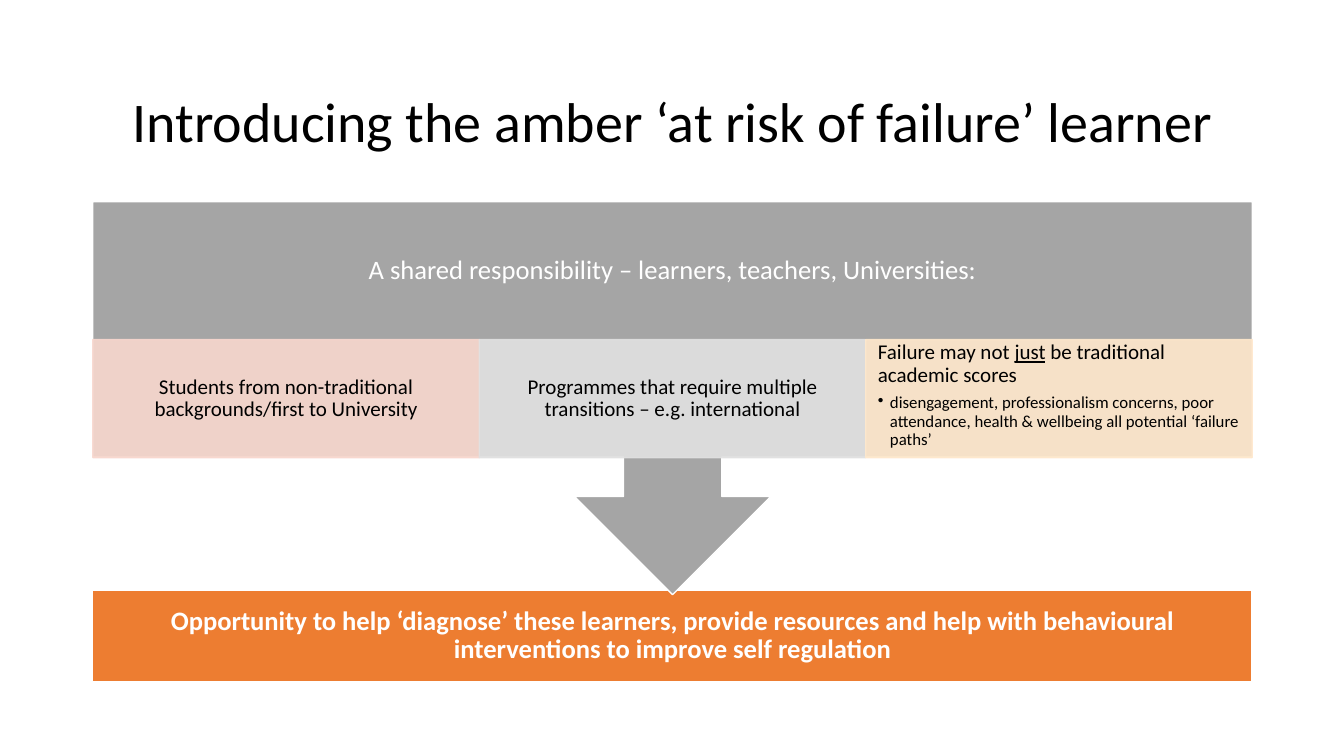
"""Build the slide on the amber 'at risk of failure' learner."""
import pptx
import pptx.util
import pptx.dml.color
import pptx.enum.shapes
import pptx.enum.text
import pptx.oxml.ns
from lxml import etree

Inches = pptx.util.Inches
Pt = pptx.util.Pt
Shape = pptx.enum.shapes.MSO_SHAPE
Align = pptx.enum.text.PP_ALIGN
Anchor = pptx.enum.text.MSO_ANCHOR
qn = pptx.oxml.ns.qn

COLORS = {
    "black": "000000", "white": "FFFFFF", "orange": "ED7D31", "gray": "A5A5A5",
    "pink": "F8D7CE", "silver": "E1E1E1", "cream": "FFE8CC",
}
LEFT, WIDTH = 0.92, 11.5
PANEL_TOP, PANEL_HIGH = 3.37, 1.17


def rgb(name):
    """Return the named colour."""
    return pptx.dml.color.RGBColor.from_string(COLORS[name])


def add_box(slide, kind, box, fill, line, alpha=100):
    """Add a filled shape with a thin outline and optional transparency."""
    shape = slide.shapes.add_shape(kind, *map(Inches, box))
    shape.shadow.inherit = False
    shape.fill.solid()
    shape.fill.fore_color.rgb = rgb(fill)
    shape.line.color.rgb = rgb(line)
    shape.line.width = Pt(1)
    if alpha < 100:
        for color in shape._element.spPr.iter(qn("a:srgbClr")):
            etree.SubElement(color, qn("a:alpha"), val=str(alpha * 1000))
    return shape


def set_frame(shape, pad_x, pad_y, anchor=Anchor.MIDDLE):
    """Set wrapping, insets and anchor, and return the text frame."""
    frame = shape.text_frame
    frame.word_wrap = True
    frame.vertical_anchor = anchor
    frame.margin_left = frame.margin_right = Inches(pad_x)
    frame.margin_top = frame.margin_bottom = Inches(pad_y)
    return frame


def add_runs(para, runs, size, color, align=Align.CENTER, bold=False):
    """Fill a paragraph with (text, underlined) runs."""
    para.alignment = align
    para.line_spacing = 0.9
    for text, under in runs:
        run = para.add_run()
        run.text = text
        font = run.font
        font.name, font.size, font.bold = "Calibri", Pt(size), bold
        font.underline = under
        font.color.rgb = rgb(color)


def add_label(slide, box, text, size, color, pad_x, pad_y):
    """Add a centred text box."""
    label = slide.shapes.add_textbox(*map(Inches, box))
    frame = set_frame(label, pad_x, pad_y)
    add_runs(frame.paragraphs[0], [(text, False)], size, color)


def add_bullet(para):
    """Give a paragraph a hanging bullet."""
    props = para._p.get_or_add_pPr()
    props.set("lvl", "1")
    props.set("marL", str(Inches(0.12)))
    props.set("indent", str(-Inches(0.12)))
    etree.SubElement(props, qn("a:buChar"), char="•")


def add_panel(slide, index, fill, runs, note=None):
    """Add one of the three panels, with a bulleted note if given."""
    wide = WIDTH / 3
    box = (LEFT + index * wide, PANEL_TOP, wide, PANEL_HIGH)
    panel = add_box(slide, Shape.RECTANGLE, box, fill, fill, 90)
    anchor = Anchor.TOP if note else Anchor.MIDDLE
    align = Align.LEFT if note else Align.CENTER
    frame = set_frame(panel, 0.12, 0.02, anchor)
    first = frame.paragraphs[0]
    add_runs(first, runs, 15, "black", align)
    if note:
        first.space_after = Pt(5.25)
        para = frame.add_paragraph()
        add_runs(para, [(note, False)], 12, "black", align)
        add_bullet(para)


def main():
    """Build and save the slide."""
    deck = pptx.Presentation()
    deck.slide_width, deck.slide_height = Inches(13.33), Inches(7.5)
    slide = deck.slides.add_slide(deck.slide_layouts[6])

    add_label(slide, (LEFT, 0.61, WIDTH, 1.24),
              "Introducing the amber ‘at risk of failure’ learner",
              40, "black", 0.1, 0.05)

    goal = add_box(slide, Shape.RECTANGLE, (LEFT, 5.86, WIDTH, 0.9),
                   "orange", "white")
    add_runs(set_frame(goal, 0.15, 0.15).paragraphs[0],
             [("Opportunity to help ‘diagnose’ these learners, provide "
               "resources and help with behavioural interventions to "
               "improve self regulation", False)], 19, "white", bold=True)

    arrow = add_box(slide, Shape.UP_ARROW_CALLOUT, (LEFT, 2, WIDTH, 3.9),
                    "gray", "white")
    arrow.rotation = 180
    add_label(slide, (LEFT, 2, WIDTH, 1.37),
              "A shared responsibility – learners, teachers, Universities:",
              19, "white", 0.15, 0.15)

    panels = [
        ("pink", [("Students from non-traditional backgrounds/first to "
                   "University", False)], None),
        ("silver", [("Programmes that require multiple transitions – e.g. "
                     "international", False)], None),
        ("cream", [("Failure may not ", False), ("just", True),
                   (" be traditional academic scores", False)],
         "disengagement, professionalism concerns, poor attendance, "
         "health & wellbeing all potential ‘failure paths’"),
    ]
    for index, panel in enumerate(panels):
        add_panel(slide, index, *panel)

    deck.save("out.pptx")


if __name__ == "__main__":
    main()
